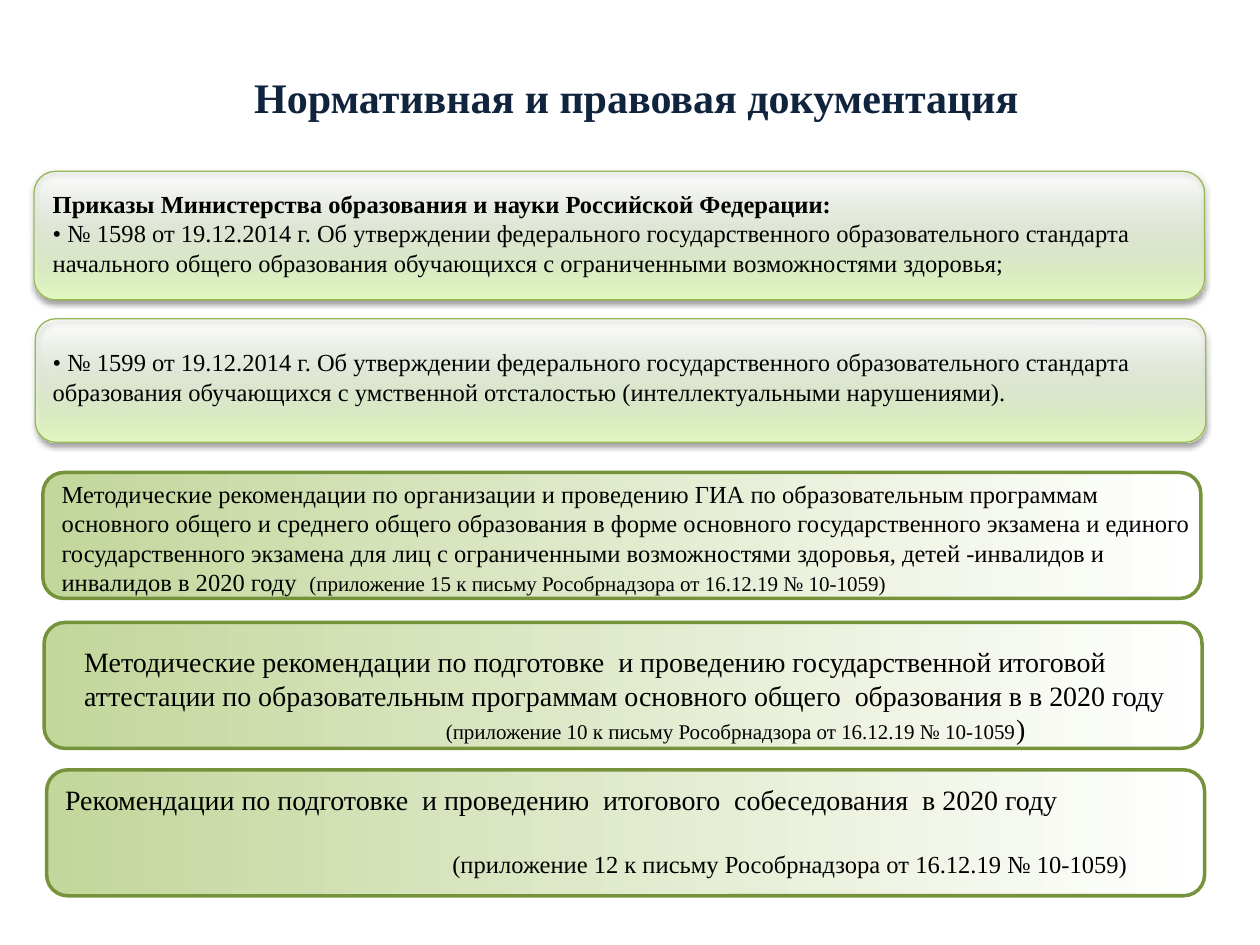
from dataclasses import dataclass

from pptx import Presentation
from pptx import util as u
from pptx.dml.color import RGBColor
from pptx.enum import shapes, text
from pptx.oxml import parse_xml
from pptx.oxml.ns import nsdecls


@dataclass(frozen=True)
class Theme:
    font: str = "Times New Roman"
    ink: str = "000000"
    heading: str = "10243E"
    order_fill: tuple = ("E3FBC2", "F4FFE6")
    order_line: str = "98B855"
    guide_fill: tuple = ("C3D69B", "FFFFFF")
    guide_line: str = "76933C"
    title_size: int = 24
    large: int = 16
    body: int = 14
    small: int = 12


class SlideBuilder:
    """Places elements on a grid of 100 columns by 75 rows."""

    COLUMNS, ROWS = 100, 75

    def __init__(self, presentation, theme):
        self.theme = theme
        self.column = presentation.slide_width / self.COLUMNS
        self.row = presentation.slide_height / self.ROWS
        self.slide = presentation.slides.add_slide(presentation.slide_layouts[5])

    def box(self, left, top, width, height):
        return (round(left * self.column), round(top * self.row),
                round(width * self.column), round(height * self.row))

    def fill_text(self, shape, paragraphs, color=None, align=text.PP_ALIGN.LEFT,
                  left_inset=0.1, top_inset=0.05):
        """Each paragraph is a list of (wording, size, bold) runs."""
        frame = shape.text_frame
        frame.word_wrap = True
        frame.auto_size = text.MSO_AUTO_SIZE.NONE
        frame.vertical_anchor = text.MSO_ANCHOR.TOP
        frame.margin_left, frame.margin_right = u.Inches(left_inset), u.Inches(0.1)
        frame.margin_top, frame.margin_bottom = u.Inches(top_inset), u.Inches(0.05)
        for index, runs in enumerate(paragraphs):
            paragraph = frame.paragraphs[0] if index == 0 else frame.add_paragraph()
            paragraph.alignment = align
            for wording, size, bold in runs:
                run = paragraph.add_run()
                run.text = wording
                run.font.name = self.theme.font
                run.font.size = u.Pt(size)
                run.font.bold = bold
                run.font.color.rgb = RGBColor.from_string(color or self.theme.ink)
        return frame

    def title(self, area, wording):
        title = self.slide.shapes.title
        title.left, title.top, title.width, title.height = self.box(*area)
        self.fill_text(title, [[(wording, self.theme.title_size, True)]],
                       self.theme.heading, text.PP_ALIGN.CENTER)

    def text_box(self, area, paragraphs, **layout):
        shape = self.slide.shapes.add_textbox(*self.box(*area))
        return self.fill_text(shape, paragraphs, **layout)

    def card(self, area, colors, angle, line_color, line_width):
        shape = self.slide.shapes.add_shape(
            shapes.MSO_SHAPE.ROUNDED_RECTANGLE, *self.box(*area))
        shape.shadow.inherit = False
        shape.fill.gradient()
        shape.fill.gradient_angle = angle
        for stop, position, color in zip(shape.fill.gradient_stops, (0, 1), colors):
            stop.position = position
            stop.color.rgb = RGBColor.from_string(color)
        shape.line.color.rgb = RGBColor.from_string(line_color)
        shape.line.width = u.Pt(line_width)
        return shape

    def order_card(self, area):
        """Green card that fades out upwards and casts a soft shadow."""
        shape = self.card(area, self.theme.order_fill, 90, self.theme.order_line, 0.75)
        properties = shape.element.spPr
        top_color = properties.xpath("a:gradFill/a:gsLst/a:gs[2]/a:srgbClr")[0]
        top_color.append(parse_xml(f'<a:alpha {nsdecls("a")} val="0"/>'))
        properties.xpath("a:effectLst")[0].append(parse_xml(
            f'<a:outerShdw {nsdecls("a")} blurRad="{u.Pt(3.1)}" dist="{u.Pt(1.6)}" '
            'dir="5400000" rotWithShape="0"><a:srgbClr val="000000">'
            '<a:alpha val="38000"/></a:srgbClr></a:outerShdw>'))

    def guide_card(self, left, top):
        """Outlined card that fades from green to white."""
        return self.card((left, top, 91.9, 10), self.theme.guide_fill, 0,
                         self.theme.guide_line, 2)


def main():
    presentation = Presentation()
    presentation.slide_width, presentation.slide_height = u.Inches(10), u.Inches(7.5)
    theme = Theme()
    builder = SlideBuilder(presentation, theme)

    # Title
    builder.title((5.6, 5.2, 89.8, 5), "Нормативная и правовая документация")

    # Ministry orders
    builder.order_card((2.7, 13.6, 92.9, 10.2))
    builder.order_card((2.8, 25.3, 92.9, 9.8))
    orders = builder.text_box((3.2, 12.2, 92.1, 31.2), [
        [("Приказы Министерства образования и науки Российской Федерации:",
          theme.body, True)],
        [("• № 1598 от 19.12.2014 г. Об утверждении федерального государственного "
          "образовательного стандарта начального общего образования обучающихся "
          "с ограниченными возможностями здоровья;", theme.body, False)],
        [("• № 1599 от 19.12.2014 г. Об утверждении федерального государственного "
          "образовательного стандарта образования обучающихся с умственной "
          "отсталостью (интеллектуальными нарушениями).", theme.body, False)],
    ], top_inset=0.28)
    orders.paragraphs[2].space_before = u.Pt(40)

    # Guideline cards
    guide_cards = [builder.guide_card(left, top)
                   for left, top in ((3.4, 37.5), (3.5, 49.4), (3.7, 61.1))]

    # State exams for learners with disabilities
    builder.text_box((3.9, 37.5, 91.8, 9.5), [[
        ("Методические рекомендации по организации и проведению ГИА по "
         "образовательным программам основного общего и среднего общего образования "
         "в форме основного государственного экзамена и единого государственного "
         "экзамена для лиц с ограниченными возможностями здоровья, детей -инвалидов "
         "и инвалидов в 2020 году  ", theme.body, False),
        ("(приложение 15 к письму Рособрнадзора от 16.12.19 № 10-1059)",
         theme.small, False)]])

    # Final certification
    builder.text_box((5.7, 50.7, 87.9, 9), [[
        ("Методические рекомендации по подготовке  и проведению государственной "
         "итоговой аттестации по образовательным программам основного общего  "
         "образования в в 2020 году", theme.large, False)]])
    builder.text_box((34.4, 56, 57.3, 2.7), [[
        ("(приложение 10 к письму Рособрнадзора от 16.12.19 № 10-1059",
         theme.small, False),
        (")", theme.large, False)]])

    # Final interview
    builder.fill_text(guide_cards[2], [[
        ("Рекомендации по подготовке  и проведению  итогового  собеседования  "
         "в 2020 году", theme.large, False)]])
    builder.text_box((23.7, 66.9, 70.1, 3.7), [[
        ("(приложение 12 к письму Рособрнадзора от 16.12.19 № 10-1059)",
         theme.body, False)]], left_inset=1.22)

    presentation.save("out.pptx")


if __name__ == "__main__":
    main()
